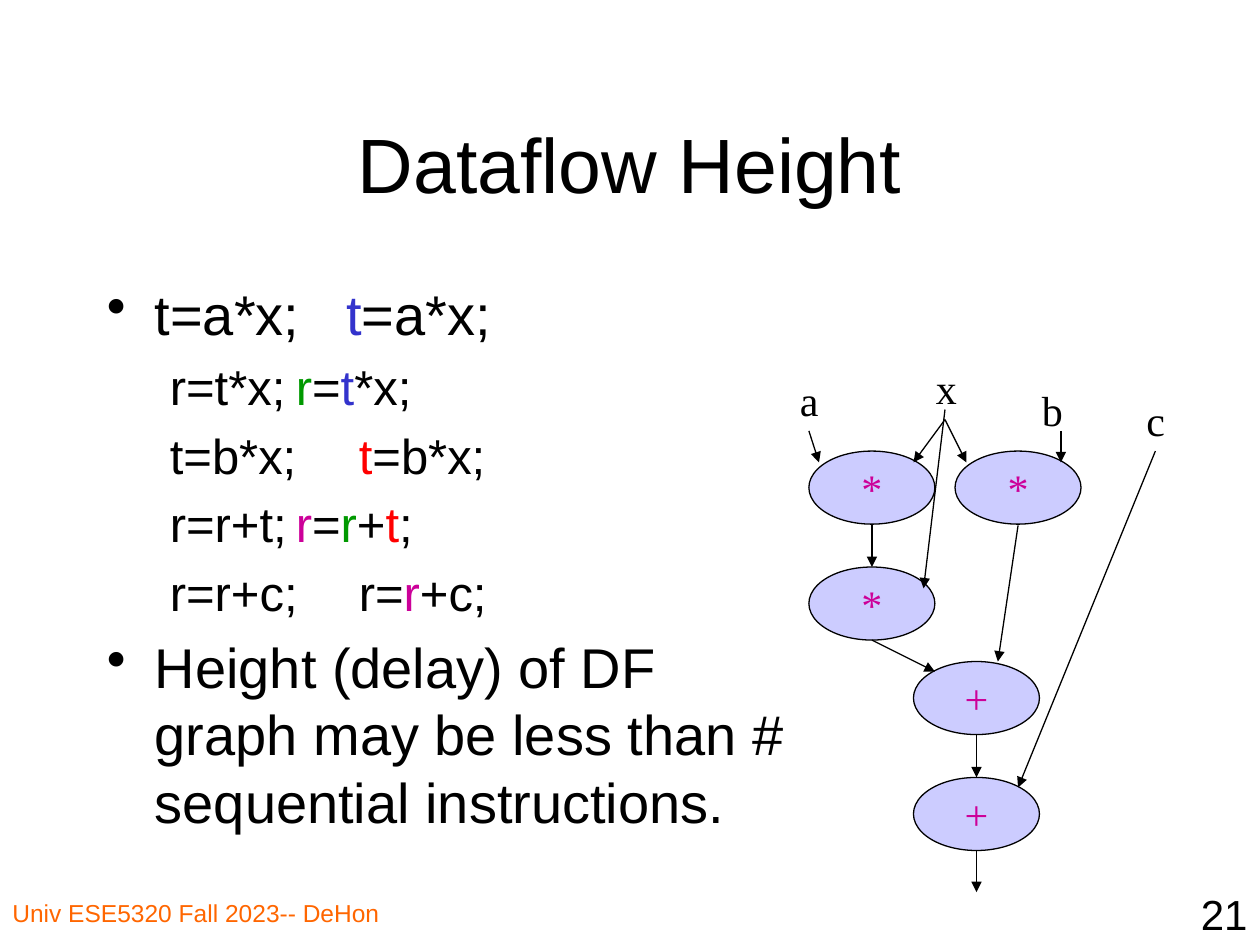
from dataclasses import dataclass

from lxml import etree
from pptx import Presentation
from pptx import util as u
from pptx.dml.color import RGBColor
from pptx.enum import shapes, text
from pptx.oxml.ns import qn

COLORS = {
    "ink": "000000", "footer": "FF6600", "node": "CCCCFF",
    "blue": "3333CC", "green": "009900", "red": "FF0000", "magenta": "CC0099",
}
SANS, SERIF = "Arial", "Times New Roman"
ALIGN, ANCHOR = text.PP_ALIGN, text.MSO_ANCHOR


def rgb(name):
    return RGBColor.from_string(COLORS[name])


@dataclass
class DataflowSlide:
    slide: object
    line_width: float = 0.75
    node_size: tuple = (1, 0.58)
    graph_size: int = 24

    def run(self, paragraph, words, size, font=SANS, color="ink"):
        piece = paragraph.add_run()
        piece.text = words
        for name, value in {"size": u.Pt(size), "name": font}.items():
            setattr(piece.font, name, value)
        piece.font.color.rgb = rgb(color)

    def title(self, words, box):
        heading = self.slide.shapes.title
        for name, value in zip(("left", "top", "width", "height"), box):
            setattr(heading, name, u.Inches(value))
        heading.text_frame.vertical_anchor = ANCHOR.MIDDLE
        line = heading.text_frame.paragraphs[0]
        line.alignment = ALIGN.CENTER
        self.run(line, words, 44)

    def frame(self, box, wrap=True):
        holder = self.slide.shapes.add_textbox(*map(u.Inches, box))
        holder.text_frame.word_wrap = wrap
        return holder.text_frame

    def label(self, words, box, size, font=SANS, color="ink",
              align=ALIGN.LEFT, wrap=True):
        line = self.frame(box, wrap).paragraphs[0]
        line.alignment = align
        self.run(line, words, size, font, color)

    def body_line(self, paragraph, pieces, size, margin, indent,
                  bullet=False, tab=None):
        paragraph.space_before = u.Pt(size * 0.2)
        props = paragraph._p.get_or_add_pPr()
        props.set("marL", str(u.Inches(margin)))
        props.set("indent", str(u.Inches(indent)))
        if bullet:
            etree.SubElement(props, qn("a:buChar"), char="•")
        else:
            etree.SubElement(props, qn("a:buNone"))
        if tab:
            stops = etree.SubElement(props, qn("a:tabLst"))
            etree.SubElement(stops, qn("a:tab"), pos=str(u.Inches(tab)), algn="l")
        for words, color in pieces:
            self.run(paragraph, words, size, color=color)

    def node(self, symbol, left, top):
        oval = self.slide.shapes.add_shape(
            shapes.MSO_SHAPE.OVAL, *map(u.Inches, (left, top, *self.node_size)))
        oval.shadow.inherit = False
        oval.fill.solid()
        oval.fill.fore_color.rgb = rgb("node")
        oval.line.color.rgb = rgb("ink")
        oval.line.width = u.Pt(self.line_width)
        oval.text_frame.word_wrap = False
        oval.text_frame.vertical_anchor = ANCHOR.MIDDLE
        line = oval.text_frame.paragraphs[0]
        line.alignment = ALIGN.CENTER
        self.run(line, symbol, self.graph_size, SERIF, "magenta")

    def arrow(self, start, end):
        edge = self.slide.shapes.add_connector(
            shapes.MSO_CONNECTOR.STRAIGHT, *map(u.Inches, (*start, *end)))
        edge.line.color.rgb = rgb("ink")
        edge.line.width = u.Pt(self.line_width)
        etree.SubElement(edge.line._get_or_add_ln(), qn("a:tailEnd"), type="triangle")
        etree.SubElement(edge._element.spPr, qn("a:effectLst"))


# Original code, renamed code in colour, and the tab stop between them
CODE = [
    ("t=a*x;", [("t", "blue"), ("=a*x;", "ink")], 1.9),
    ("r=t*x;", [("r", "green"), ("=", "ink"), ("t", "blue"), ("*x;", "ink")], 1.83),
    ("t=b*x;", [("t", "red"), ("=b*x;", "ink")], 3.66),
    ("r=r+t;", [("r", "magenta"), ("=", "ink"), ("r", "green"), ("+", "ink"),
                ("t", "red"), (";", "ink")], 2.7),
    ("r=r+c;", [("r=", "ink"), ("r", "magenta"), ("+c;", "ink")], 2.68),
]
CONCLUSION = "Height (delay) of DF graph may be less than # sequential instructions."

# Operators and inputs of the graph: symbol, left, top
OPERATORS = [("*", 6.42, 3.58), ("*", 7.58, 3.58), ("*", 6.42, 4.5),
             ("+", 7.25, 5.25), ("+", 7.25, 6.17)]
INPUTS = [("a", 6.25, 2.92), ("x", 7.33, 2.83), ("b", 8.17, 3), ("c", 9, 3.08)]
EDGES = [
    # Between operators, and the result
    ((6.92, 4.17), (6.92, 4.5)), ((7.75, 5.83), (7.75, 6.17)),
    ((6.92, 5.08), (7.42, 5.33)), ((8.08, 4.17), (7.92, 5.25)),
    ((7.75, 6.75), (7.75, 7.08)),
    # From the inputs
    ((9.17, 3.58), (8.08, 6.25)), ((8.42, 3.42), (8.42, 3.67)),
    ((7.5, 3.33), (7.25, 3.67)), ((7.5, 3.33), (7.67, 3.67)),
    ((7.5, 3.25), (7.33, 4.67)), ((6.42, 3.42), (6.5, 3.67)),
]


def main():
    deck = Presentation()
    deck.slide_width, deck.slide_height = u.Inches(10), u.Inches(7.5)
    page = DataflowSlide(deck.slides.add_slide(deck.slide_layouts[5]))

    # Footer, page number and title
    page.label("Univ ESE5320 Fall 2023-- DeHon", (0, 7.08, 3.83, 0.42), 14,
               color="footer")
    page.label("21", (7.92, 7, 2.08, 0.5), 24, align=ALIGN.RIGHT)
    page.title("Dataflow Height", (0.75, 0.67, 8.5, 1.25))

    # Code comparison and conclusion
    body = page.frame((0.75, 2.17, 5.67, 4.75))
    bullet_style = {"size": 32, "margin": 0.38, "indent": -0.38, "bullet": True}
    code_style = {"size": 28, "margin": 0, "indent": 0.5}
    for row, (before, after, tab) in enumerate(CODE):
        line = body.add_paragraph() if row else body.paragraphs[0]
        line.level = min(row, 1)
        page.body_line(line, [(before + "\t", "ink"), *after], tab=tab,
                       **(code_style if row else bullet_style))
    page.body_line(body.add_paragraph(), [(CONCLUSION, "ink")], **bullet_style)

    # Dataflow graph
    for operator in OPERATORS:
        page.node(*operator)
    for name, left, top in INPUTS:
        page.label(name, (left, top, 0.36, 0.5), page.graph_size, SERIF, wrap=False)
    for start, end in EDGES:
        page.arrow(start, end)

    deck.save("out.pptx")


if __name__ == "__main__":
    main()
